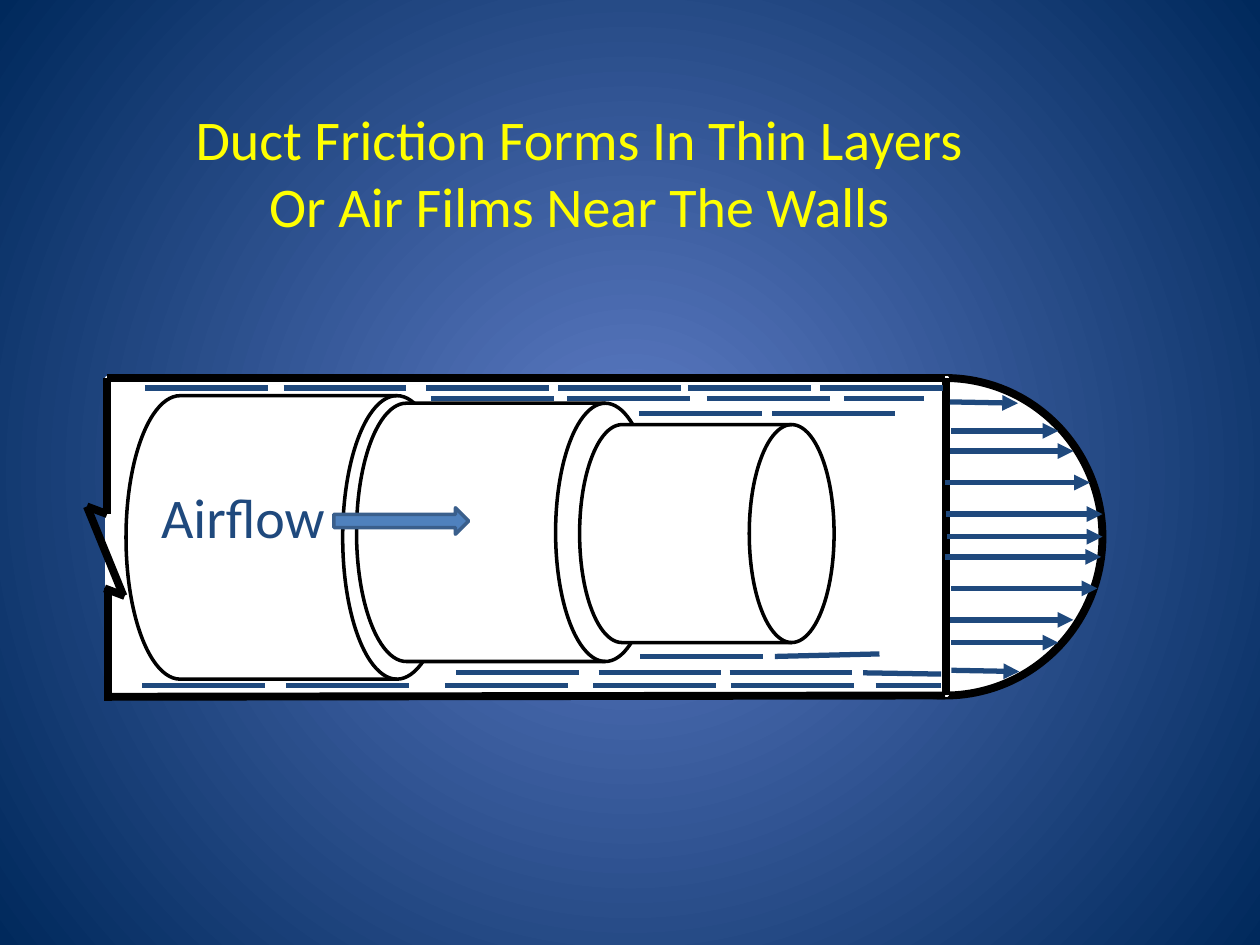
from dataclasses import dataclass

from pptx import Presentation, util as u
from pptx.dml.color import RGBColor
from pptx.enum import shapes, text
from pptx.oxml import parse_xml
from pptx.oxml.ns import nsdecls, qn
from pptx.oxml.xmlchemy import OxmlElement

SHAPE = shapes.MSO_AUTO_SHAPE_TYPE


@dataclass(frozen=True)
class Theme:
    glow: str = "5E7CC5"
    edge: str = "00295C"
    title: str = "FFFF00"
    air: str = "1F497D"
    wall: str = "000000"
    inside: str = "FFFFFF"
    arrow: str = "4F81BD"
    arrow_line: str = "3A5F8C"
    font: str = "Calibri"
    size: int = 32
    wall_width: float = 4.5
    air_width: float = 3
    outline_width: float = 2


class SlideBuilder:
    """Draws on a grid of 100 columns by 75 rows."""

    COLUMNS, ROWS = 100, 75

    def __init__(self, presentation, theme):
        self.theme = theme
        self.column = presentation.slide_width / self.COLUMNS
        self.row = presentation.slide_height / self.ROWS
        self.slide = presentation.slides.add_slide(presentation.slide_layouts[6])

    def place(self, column, row):
        return u.Emu(round(column * self.column)), u.Emu(round(row * self.row))

    def background(self):
        fill = self.slide.background.fill
        fill.gradient()
        for stop, color, position in zip(
            fill.gradient_stops, (self.theme.glow, self.theme.edge), (0, 1)
        ):
            stop.color.rgb = RGBColor.from_string(color)
            stop.position = position
        gradient = self.slide.element.find(".//" + qn("a:gradFill"))
        circle = parse_xml(
            f'<a:path {nsdecls("a")} path="circle">'
            '<a:fillToRect l="50000" t="50000" r="50000" b="50000"/></a:path>'
        )
        gradient.replace(gradient.find(qn("a:lin")), circle)

    def shape(self, kind, left, top, width, height, fill, line, line_width):
        shape = self.slide.shapes.add_shape(
            kind, *self.place(left, top), *self.place(width, height)
        )
        shape.shadow.inherit = False
        shape.fill.solid()
        shape.fill.fore_color.rgb = RGBColor.from_string(fill)
        self.stroke(shape.line, line, line_width)
        return shape

    def stroke(self, line, color, width):
        line.color.rgb = RGBColor.from_string(color)
        line.width = u.Pt(width)

    def line(self, start, end, color, width, arrow=False):
        connector = self.slide.shapes.add_connector(
            shapes.MSO_CONNECTOR.STRAIGHT, *self.place(*start), *self.place(*end)
        )
        self.stroke(connector.line, color, width)
        if arrow:
            head = OxmlElement("a:tailEnd")
            head.set("type", "triangle")
            connector.line._get_or_add_ln().append(head)
        connector._element.spPr.append(OxmlElement("a:effectLst"))
        return connector

    def wall(self, start, end):
        return self.line(start, end, self.theme.wall, self.theme.wall_width)

    def air(self, start, end, arrow=False):
        return self.line(start, end, self.theme.air, self.theme.air_width, arrow)

    def text(self, left, top, width, height, lines, color, align):
        box = self.slide.shapes.add_textbox(
            *self.place(left, top), *self.place(width, height)
        )
        frame = box.text_frame
        frame.word_wrap = False
        frame.auto_size = text.MSO_AUTO_SIZE.SHAPE_TO_FIT_TEXT
        frame.text = "\n".join(lines)
        for paragraph in frame.paragraphs:
            paragraph.alignment = align
            paragraph.font.name = self.theme.font
            paragraph.font.size = u.Pt(self.theme.size)
            paragraph.font.color.rgb = RGBColor.from_string(color)


# Air films: row, start columns, length of the last film, its rise
FILM_LENGTH = 9.75
FILMS = [
    (30.8, (11.5, 22.5, 33.8, 44.3, 54.6, 65.1), FILM_LENGTH, 0),
    (31.6, (34.2, 45, 56.1, 67), 6.3, 0),
    (32.8, (50.7, 61.3), FILM_LENGTH, 0),
    (52.1, (50.8, 61.5), 8.3, 0.2),
    (53.4, (36.2, 47.5, 57.9, 68.5), 6.2, -0.1),
    (54.4, (11.3, 22.7, 35.3, 47.1, 58, 69.5), 5.2, 0),
]

# Velocity arrows: start column, end column, row, drop
VELOCITIES = [
    (75.4, 80.8, 31.9, 0.1),
    (75.5, 84, 34.2, 0),
    (75.4, 85.2, 35.8, 0),
    (75, 86.5, 38.3, 0),
    (75.1, 87.5, 40.8, 0),
    (75, 87.4, 44.2, 0),
    (75.5, 87.1, 46.7, 0),
    (75.4, 85.2, 49.2, 0),
    (75.5, 84, 51, 0),
    (75.5, 80.9, 53.2, 0.1),
]


def main():
    presentation = Presentation()
    presentation.slide_width, presentation.slide_height = u.Inches(10), u.Inches(7.5)
    theme = Theme()
    builder = SlideBuilder(presentation, theme)
    builder.background()

    # Duct with its rounded velocity profile
    builder.shape(SHAPE.FLOWCHART_CONNECTOR, 62.5, 30, 25, 25.2,
                  theme.inside, theme.wall, theme.wall_width)
    duct = builder.shape(SHAPE.RECTANGLE, 8.5, 30, 66.7, 25.2,
                         theme.inside, theme.inside, theme.outline_width)
    builder.wall((8.5, 30), (75, 30))
    builder.wall((8.6, 55.3), (75, 55.2))
    builder.wall((8.5, 40.8), (8.5, 30))
    builder.wall((75.1, 55.2), (75.1, 30))

    # Title
    builder.text(14.2, 7.8, 63.6, 11.8,
                 ["Duct Friction Forms In Thin Layers", "Or Air Films Near The Walls"],
                 theme.title, text.PP_ALIGN.CENTER)

    # Air layers, wide to narrow
    for layer in [(10, 31.4, 25.8, 22.5), (28.3, 32, 23.7, 20.5), (46, 33.7, 20.2, 17.3)]:
        builder.shape(SHAPE.FLOWCHART_DIRECT_ACCESS_STORAGE, *layer,
                      theme.inside, theme.wall, theme.outline_width)

    # Air films along the walls
    for row, starts, last_length, rise in FILMS:
        for start in starts[:-1]:
            builder.air((start, row), (start + FILM_LENGTH, row))
        builder.air((starts[-1], row), (starts[-1] + last_length, row - rise))

    # Velocity arrows, the middle one from the duct's end
    for start, end, row, drop in VELOCITIES:
        builder.air((start, row), (end, row + drop), arrow=True)
    builder.air((75.2, 42.6), (87.5, 42.6), arrow=True).begin_connect(duct, 3)

    # Broken left wall
    builder.wall((8.6, 55.6), (8.6, 46.7))
    builder.wall((9.8, 47.3), (6.9, 40.2))
    builder.wall((8.5, 40.8), (6.9, 40.2))
    builder.wall((9.9, 47.3), (8.3, 46.7))

    # Airflow label and arrow
    builder.text(11.8, 37.8, 15.2, 6.4, ["Airflow"], theme.air, text.PP_ALIGN.LEFT)
    builder.shape(SHAPE.RIGHT_ARROW, 26.5, 40.3, 10.7, 2.1,
                  theme.arrow, theme.arrow_line, theme.outline_width)

    presentation.save("out.pptx")


if __name__ == "__main__":
    main()
